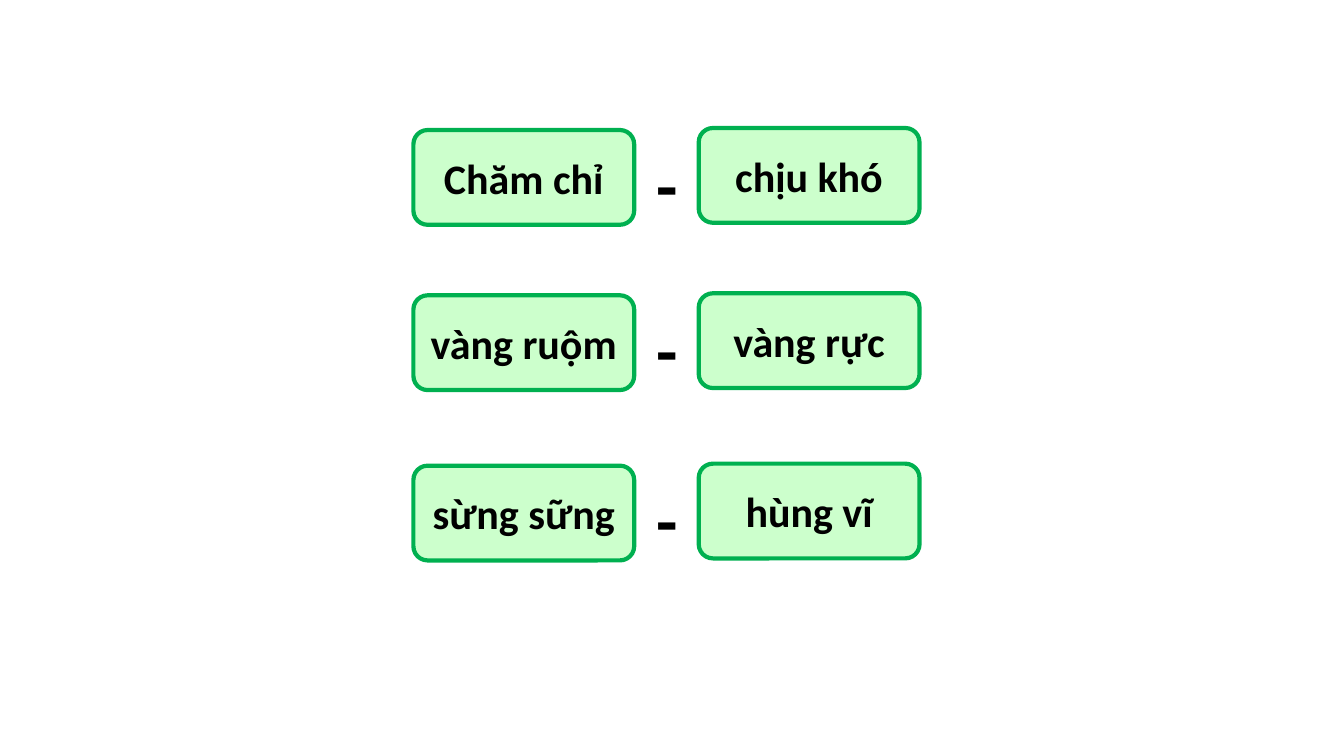
from pptx import Presentation
from pptx.dml.color import RGBColor
from pptx.enum.shapes import MSO_SHAPE
from pptx.enum.text import MSO_ANCHOR, PP_ALIGN
from pptx.util import Inches, Pt

ROUND = MSO_SHAPE.ROUNDED_RECTANGLE
MIDDLE, TOP = MSO_ANCHOR.MIDDLE, MSO_ANCHOR.TOP
CENTER, LEFT = PP_ALIGN.CENTER, PP_ALIGN.LEFT

MINT = RGBColor(0xCC, 0xFF, 0xCC)
GREEN = RGBColor(0x00, 0xB0, 0x50)
BLACK = RGBColor(0x00, 0x00, 0x00)

# Columns and rows, in inches
LEFT_COL, DASH_COL, RIGHT_COL = 4.1, 6.41, 6.93
CARD_W, DASH_W, ROW_H = 2.19, 0.4, 0.94
RIGHT_UP, DASH_DOWN = 0.02, 0.06

# Top of each row and its two words
PAIRS = [
    (1.29, "Chăm chỉ", "chịu khó"),
    (2.93, "vàng ruộm", "vàng rực"),
    (4.62, "sừng sững", "hùng vĩ"),
]


def write(shape, text, size=30, align=CENTER, anchor=MIDDLE, wrap=True):
    frame = shape.text_frame
    frame.word_wrap = wrap
    frame.vertical_anchor = anchor
    para = frame.paragraphs[0]
    para.alignment = align
    run = para.add_run()
    run.text = text
    font = run.font
    font.name, font.size, font.bold = "Calibri", Pt(size), True
    font.color.rgb = BLACK


def add_card(slide, x, y, word):
    card = slide.shapes.add_shape(
        ROUND, Inches(x), Inches(y), Inches(CARD_W), Inches(ROW_H))
    card.adjustments[0] = 0.15
    card.shadow.inherit = False
    card.fill.solid()
    card.fill.fore_color.rgb = MINT
    card.line.color.rgb = GREEN
    card.line.width = Pt(3)
    write(card, word)


def add_dash(slide, x, y):
    box = slide.shapes.add_textbox(
        Inches(x), Inches(y), Inches(DASH_W), Inches(ROW_H))
    write(box, "-", size=50, align=LEFT, anchor=TOP, wrap=False)


def main():
    deck = Presentation()
    deck.slide_width, deck.slide_height = Inches(13.33), Inches(7.5)
    slide = deck.slides.add_slide(deck.slide_layouts[6])

    # One row for each pair of words
    for top, first, second in PAIRS:
        add_card(slide, LEFT_COL, top, first)
        add_card(slide, RIGHT_COL, top - RIGHT_UP, second)
        add_dash(slide, DASH_COL, top + DASH_DOWN)

    deck.save("out.pptx")


if __name__ == "__main__":
    main()
